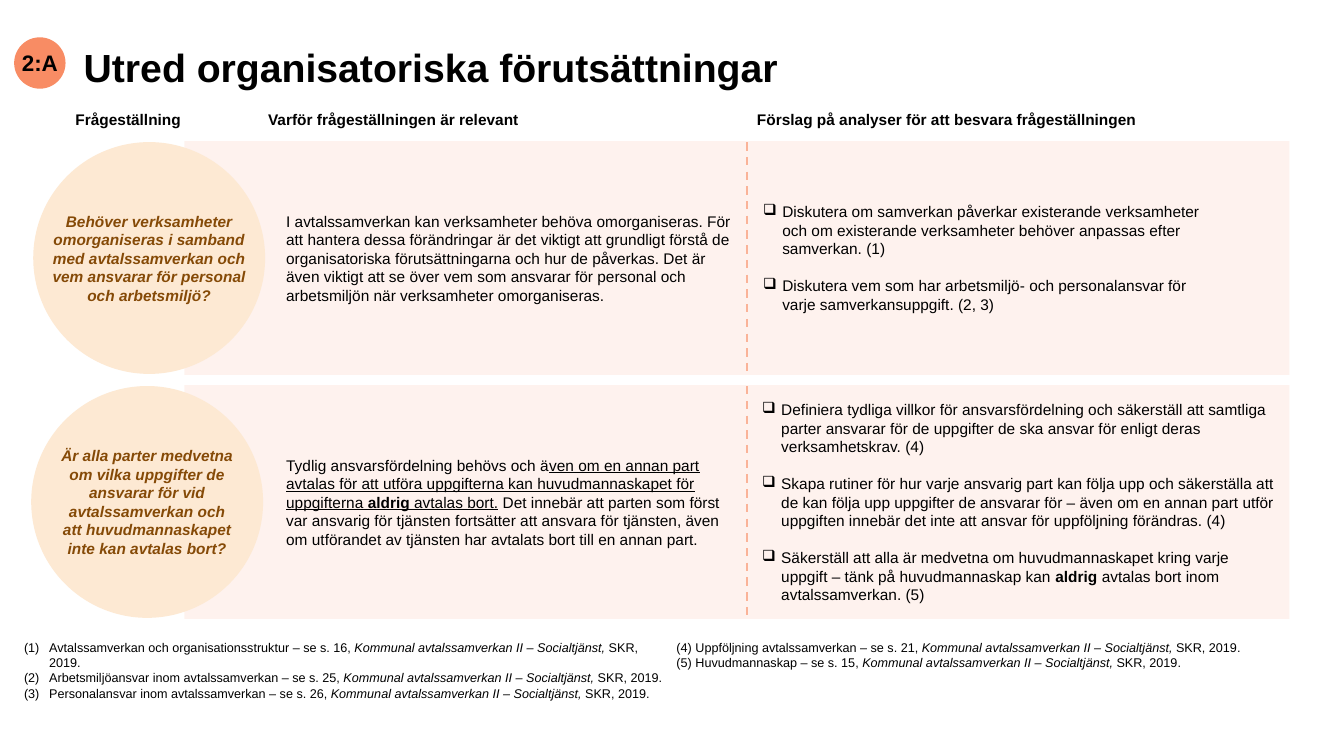
import pptx
import pptx.util
import pptx.dml.color
import pptx.enum.dml
import pptx.enum.shapes
import pptx.enum.text
import pptx.oxml.ns
from lxml import etree

Inches = pptx.util.Inches
Pt = pptx.util.Pt
SHAPE = pptx.enum.shapes.MSO_SHAPE
ANCHOR = pptx.enum.text.MSO_ANCHOR
ALIGN = pptx.enum.text.PP_ALIGN
qn = pptx.oxml.ns.qn

FONT, BLACK, BROWN = "Arial", "000000", "854A07"
CORAL, PEACH, BAND, DASH = "F88C64", "FDE9D3", "FDD9CB", "FAB398"

TITLE = "Utred organisatoriska förutsättningar"
NUMBER = "2:A"
HEADERS = [
    ("Frågeställning", 0.65, 1.3),
    ("Varför frågeställningen är relevant", 2.56, 3.09),
    ("Förslag på analyser för att besvara frågeställningen", 7.41, 4.14),
]
ROWS = [
    {
        "question": "Behöver verksamheter omorganiseras i samband med avtalssamverkan och "
                    "vem ansvarar för personal och arbetsmiljö?",
        "circle_left": 0.33, "question_width": 2.24,
        "reason": ["I avtalssamverkan kan verksamheter behöva omorganiseras. För att hantera dessa "
                   "förändringar är det viktigt att grundligt förstå de organisatoriska "
                   "förutsättningarna och hur de påverkas. Det är även viktigt att se över vem som "
                   "ansvarar för personal och arbetsmiljön när verksamheter omorganiseras."],
        "analyses_left": 7.47, "analyses_width": 4.75,
        "analyses": [
            ["Diskutera om samverkan påverkar existerande verksamheter och om existerande "
             "verksamheter behöver anpassas efter samverkan. (1)"],
            ["Diskutera vem som har arbetsmiljö- och personalansvar för varje "
             "samverkansuppgift. (2, 3)"],
        ],
    },
    {
        "question": "Är alla parter medvetna om vilka uppgifter de ansvarar för vid "
                    "avtalssamverkan och att huvudmannaskapet inte kan avtalas bort?",
        "circle_left": 0.31, "question_width": 1.97,
        "reason": [
            "Tydlig ansvarsfördelning behövs och ä",
            ("ven om en annan part avtalas för att utföra uppgifterna kan huvudmannaskapet för "
             "uppgifterna ", {"underline": True}),
            ("aldrig", {"underline": True, "bold": True}),
            (" avtalas bort.", {"underline": True}),
            " Det innebär att parten som först var ansvarig för tjänsten fortsätter att ansvara "
            "för tjänsten, även om utförandet av tjänsten har avtalats bort till en annan part.",
        ],
        "analyses_left": 7.46, "analyses_width": 5.29,
        "analyses": [
            ["Definiera tydliga villkor för ansvarsfördelning och säkerställ att samtliga parter "
             "ansvarar för de uppgifter de ska ansvar för enligt deras verksamhetskrav. (4)"],
            ["Skapa rutiner för hur varje ansvarig part kan följa upp och säkerställa att de kan "
             "följa upp uppgifter de ansvarar för – även om en annan part utför uppgiften innebär "
             "det inte att ansvar för uppföljning förändras. (4)"],
            ["Säkerställ att alla är medvetna om huvudmannaskapet kring varje uppgift – tänk på "
             "huvudmannaskap kan ", ("aldrig", {"bold": True}),
             " avtalas bort inom avtalssamverkan. (5)"],
        ],
    },
]
REPORT, PUBLISHER = "Kommunal avtalssamverkan II – Socialtjänst, ", "SKR, 2019."
NOTES = [
    (0.14, 6.63, 0.25, 1, ["Avtalssamverkan och organisationsstruktur – se s. 16, ",
                           "Arbetsmiljöansvar inom avtalssamverkan – se s. 25, ",
                           "Personalansvar inom avtalssamverkan – se s. 26, "]),
    (6.61, 5.83, 0.19, 4, ["Uppföljning avtalssamverkan – se s. 21, ",
                           "Huvudmannaskap – se s. 15, "]),
]

BAND_LEFT, BAND_WIDTH, BAND_HEIGHT = 1.83, 10.96, 2.32
ROW_TOP, ROW_STEP = 1.4, 2.42
CIRCLE, DIVIDER = 2.3, 7.41
REASON_LEFT, REASON_WIDTH = 2.74, 4.64


def rgb(value):
    return pptx.dml.color.RGBColor.from_string(value)


def write(tf, paras, size=11, color=BLACK, bold=False, italic=False, align=ALIGN.LEFT,
          anchor=ANCHOR.TOP, indent=0, bullet=None, start=None, gap=0, wrap=True):
    tf.word_wrap = wrap
    tf.vertical_anchor = anchor
    for i, runs in enumerate(paras):
        p = tf.paragraphs[0] if i == 0 else tf.add_paragraph()
        p.alignment = align
        if i and gap:
            p.space_before = Pt(gap)
        if bullet or start:
            pPr = p._p.get_or_add_pPr()
            pPr.set("marL", str(Inches(indent)))
            pPr.set("indent", str(-Inches(indent)))
            if bullet:
                etree.SubElement(pPr, qn("a:buChar"), char=bullet)
            else:
                etree.SubElement(pPr, qn("a:buAutoNum"), type="arabicParenBoth", startAt=str(start))
        for run in runs:
            text, extra = (run, {}) if isinstance(run, str) else run
            r = p.add_run()
            r.text = text
            r.font.name = FONT
            r.font.size = Pt(size)
            r.font.color.rgb = rgb(color)
            r.font.bold = extra.get("bold", bold)
            r.font.italic = extra.get("italic", italic)
            r.font.underline = extra.get("underline", False)


def add_text(s, paras, x, y, w, h, **fmt):
    tb = s.shapes.add_textbox(Inches(x), Inches(y), Inches(w), Inches(h))
    write(tb.text_frame, paras, **fmt)


def add_shape(s, kind, x, y, w, h, fill, alpha=None):
    sp = s.shapes.add_shape(kind, Inches(x), Inches(y), Inches(w), Inches(h))
    sp.shadow.inherit = False
    sp.line.fill.background()
    sp.fill.solid()
    sp.fill.fore_color.rgb = rgb(fill)
    if alpha:
        clr = sp._element.spPr.find(qn("a:solidFill")).find(qn("a:srgbClr"))
        etree.SubElement(clr, qn("a:alpha"), val=str(alpha * 1000))
    return sp


def add_divider(s, x, top, bottom):
    line = s.shapes.add_connector(pptx.enum.shapes.MSO_CONNECTOR.STRAIGHT,
                                  Inches(x), Inches(top), Inches(x), Inches(bottom))
    line.line.color.rgb = rgb(DASH)
    line.line.width = Pt(1.5)
    line.line.dash_style = pptx.enum.dml.MSO_LINE.DASH
    etree.SubElement(line._element.spPr, qn("a:effectLst"))


def add_row(s, row, top):
    add_shape(s, SHAPE.RECTANGLE, BAND_LEFT, top, BAND_WIDTH, BAND_HEIGHT, BAND, alpha=32)
    add_shape(s, SHAPE.OVAL, row["circle_left"], top + 0.01, CIRCLE, CIRCLE, PEACH)
    width = row["question_width"]
    add_text(s, [[row["question"]]], row["circle_left"] + (CIRCLE - width) / 2, top, width,
             BAND_HEIGHT, color=BROWN, bold=True, italic=True, align=ALIGN.CENTER,
             anchor=ANCHOR.MIDDLE)
    add_text(s, [row["reason"]], REASON_LEFT, top, REASON_WIDTH, BAND_HEIGHT,
             anchor=ANCHOR.MIDDLE)
    add_text(s, row["analyses"], row["analyses_left"], top, row["analyses_width"], BAND_HEIGHT,
             anchor=ANCHOR.MIDDLE, indent=0.19, bullet="❑", gap=13.2)
    add_divider(s, DIVIDER, top + 0.01, top + BAND_HEIGHT)


def main():
    prs = pptx.Presentation()
    prs.slide_width, prs.slide_height = Inches(13.33), Inches(7.5)
    s = prs.slides.add_slide(prs.slide_layouts[5])

    title = s.shapes.title
    title.left, title.top = Inches(0.73), Inches(0.4)
    title.width, title.height = Inches(10.51), Inches(0.58)
    write(title.text_frame, [[TITLE]], size=28, bold=True, anchor=ANCHOR.MIDDLE)
    title.text_frame.paragraphs[0].line_spacing = 0.95

    badge = add_shape(s, SHAPE.OVAL, 0.14, 0.37, 0.51, 0.51, CORAL)
    tf = badge.text_frame
    tf.margin_left = tf.margin_right = tf.margin_top = tf.margin_bottom = 0
    write(tf, [[NUMBER]], size=16, bold=True, align=ALIGN.CENTER, anchor=ANCHOR.MIDDLE, wrap=False)

    for text, x, w in HEADERS:
        add_text(s, [[text]], x, 1.04, w, 0.29, bold=True)
    for i, row in enumerate(ROWS):
        add_row(s, row, ROW_TOP + i * ROW_STEP)
    for x, w, indent, start, sources in NOTES:
        paras = [[source, (REPORT, {"italic": True}), PUBLISHER] for source in sources]
        add_text(s, paras, x, 6.3, w, 0.56, size=9, indent=indent, start=start)

    prs.save("out.pptx")


if __name__ == "__main__":
    main()
